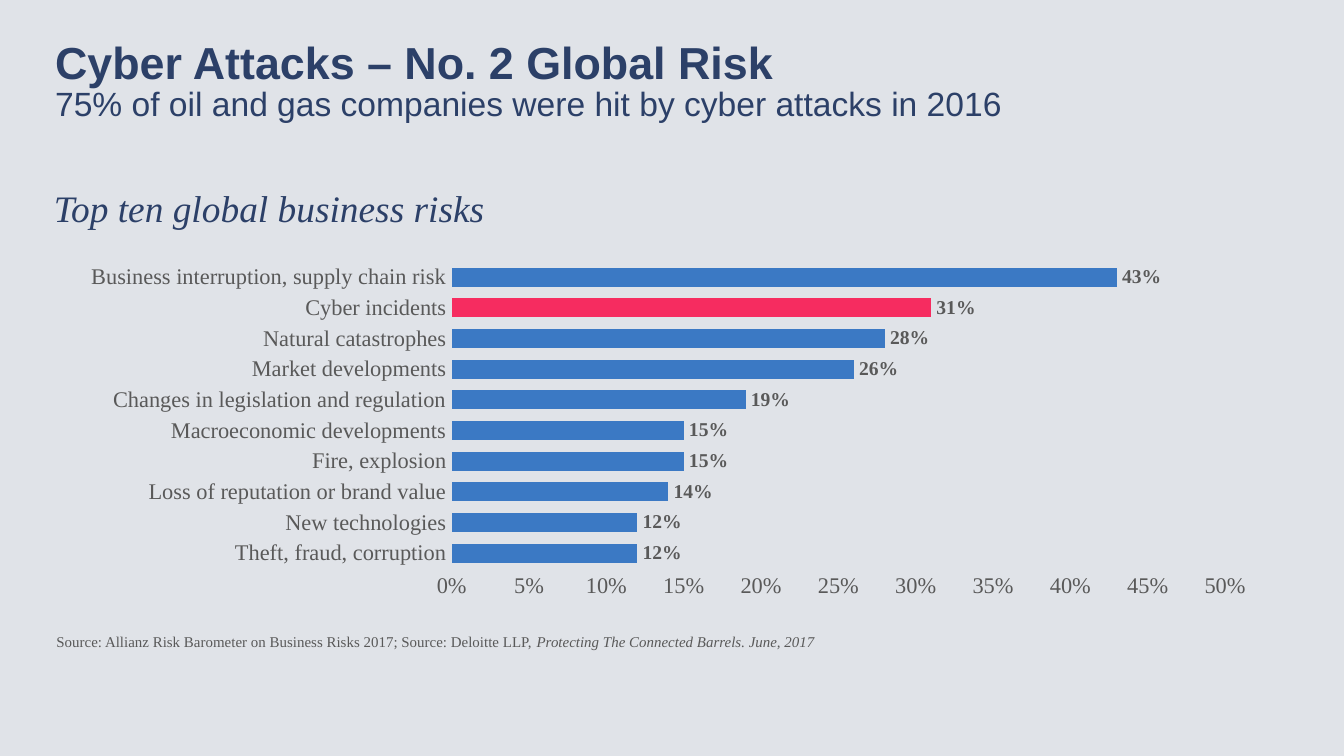
from lxml import etree
from pptx import Presentation
from pptx.chart.data import CategoryChartData
from pptx.dml.color import RGBColor
from pptx.enum.chart import XL_CHART_TYPE, XL_LABEL_POSITION, XL_TICK_MARK
from pptx.enum.text import MSO_ANCHOR, MSO_AUTO_SIZE, PP_ALIGN
from pptx.oxml.ns import qn
from pptx.util import Emu, Pt

EMU_PER_PX = 4572  # 200 px to the inch
TITLE_ONLY = 5
BAR_CLUSTERED = XL_CHART_TYPE.BAR_CLUSTERED
OUTSIDE_END = XL_LABEL_POSITION.OUTSIDE_END
NO_TICK = XL_TICK_MARK.NONE
TOP = MSO_ANCHOR.TOP
LEFT = PP_ALIGN.LEFT
NO_AUTOFIT = MSO_AUTO_SIZE.NONE

BACKGROUND = RGBColor(0xE0, 0xE3, 0xE8)
NAVY = RGBColor(0x2C, 0x40, 0x68)
GREY = RGBColor(0x59, 0x59, 0x59)
BLUE = RGBColor(0x3B, 0x79, 0xC4)
RED = RGBColor(0xF6, 0x2C, 0x60)

SANS, SERIF = "Arial", "Times New Roman"
HIGHLIGHTED_RISK = "Cyber incidents"
RISKS = {
    "Theft, fraud, corruption": 0.12,
    "New technologies": 0.12,
    "Loss of reputation or brand value": 0.14,
    "Fire, explosion": 0.15,
    "Macroeconomic developments": 0.15,
    "Changes in legislation and regulation": 0.19,
    "Market developments": 0.26,
    "Natural catastrophes": 0.28,
    HIGHLIGHTED_RISK: 0.31,
    "Business interruption, supply chain risk": 0.43,
}
PLOT_AREA = {"x": 0.323, "y": 0.057, "w": 0.607, "h": 0.751}


def px(length):
    return Emu(length * EMU_PER_PX)


def set_values(target, values):
    for name, value in values.items():
        setattr(target, name, value)


class RiskSlide:
    def __init__(self, deck):
        self.slide = deck.slides.add_slide(deck.slide_layouts[TITLE_ONLY])
        fill = self.slide.background.fill
        fill.solid()
        fill.fore_color.rgb = BACKGROUND

    def style_font(self, font, color, **values):
        set_values(font, values)
        font.color.rgb = color

    def fill_text(self, shape, box, runs, color, inset=0, **font_values):
        """Place a shape and fill it with one paragraph of (text, italic) runs."""
        set_values(shape, dict(zip(("left", "top", "width", "height"), map(px, box))))
        frame = shape.text_frame
        set_values(frame, {
            "word_wrap": True, "auto_size": NO_AUTOFIT, "vertical_anchor": TOP,
            "margin_left": 0, "margin_right": 0,
            "margin_top": px(inset), "margin_bottom": px(inset),
        })
        paragraph = frame.paragraphs[0]
        paragraph.alignment = LEFT
        for text, italic in runs:
            run = paragraph.add_run()
            run.text = text
            self.style_font(run.font, color, italic=italic, **font_values)

    def title(self, box, text, **font_values):
        self.fill_text(self.slide.shapes.title, box, [(text, False)], NAVY, **font_values)

    def text(self, box, runs, color, **values):
        shape = self.slide.shapes.add_textbox(0, 0, 0, 0)
        self.fill_text(shape, box, runs, color, **values)

    def bar_chart(self, box, values_by_category, highlighted):
        data = CategoryChartData(number_format="0%")
        data.categories = list(values_by_category)
        data.add_series("Series 1", list(values_by_category.values()))
        chart = self.slide.shapes.add_chart(BAR_CLUSTERED, *map(px, box), data).chart
        set_values(chart, {"has_legend": False, "has_title": False})
        self.style_font(chart.font, GREY, name=SERIF, size=Pt(18))

        for axis in (chart.category_axis, chart.value_axis):
            set_values(axis, {
                "major_tick_mark": NO_TICK, "minor_tick_mark": NO_TICK,
                "has_major_gridlines": False,
            })
            axis.format.line.fill.background()
            self.style_font(axis.tick_labels.font, GREY, name=SERIF, size=Pt(12))
        set_values(chart.value_axis, {
            "minimum_scale": 0, "maximum_scale": 0.5, "major_unit": 0.05,
        })
        set_values(chart.value_axis.tick_labels, {
            "number_format": "0%", "number_format_is_linked": False,
        })

        plot = chart.plots[0]
        set_values(plot, {"gap_width": 61, "vary_by_categories": False})
        series = plot.series[0]
        highlighted_point = series.points[list(values_by_category).index(highlighted)]
        for bar, color in ((series, BLUE), (highlighted_point, RED)):
            bar.format.fill.solid()
            bar.format.fill.fore_color.rgb = color

        labels = series.data_labels
        set_values(labels, {
            "show_value": True, "position": OUTSIDE_END,
            "number_format": "0%", "number_format_is_linked": False,
        })
        self.style_font(labels.font, GREY, name=SERIF, size=Pt(10.5), bold=True)
        self.fix_plot_area(chart)

    def fix_plot_area(self, chart):
        """Pin the inner plot area to fractions of the chart frame."""
        plot_area = chart._chartSpace.chart.plotArea
        for layout in plot_area.findall(qn("c:layout")):
            plot_area.remove(layout)
        layout = etree.Element(qn("c:layout"))
        plot_area.insert(0, layout)
        manual = etree.SubElement(layout, qn("c:manualLayout"))
        settings = {"layoutTarget": "inner", "xMode": "edge", "yMode": "edge", **PLOT_AREA}
        for tag, value in settings.items():
            etree.SubElement(manual, qn(f"c:{tag}"), val=str(value))


def main():
    deck = Presentation()
    set_values(deck, {"slide_width": px(2000), "slide_height": px(1125)})
    page = RiskSlide(deck)
    page.title((82, 52, 1836, 54), "Cyber Attacks – No. 2 Global Risk",
               name=SANS, size=Pt(24), bold=True)
    page.text((82, 124, 1836, 124),
              [("75% of oil and gas companies were hit by cyber attacks in 2016", False)],
              NAVY, name=SANS, size=Pt(18))
    page.bar_chart((60, 355, 1896, 608), RISKS, HIGHLIGHTED_RISK)
    page.text((80, 275, 1516, 94), [("Top ten global business risks", True)],
              NAVY, name=SERIF, size=Pt(20))
    page.text((84, 932, 1680, 68),
              [("Source: Allianz Risk Barometer on Business Risks 2017; "
                "Source: Deloitte LLP, ", False),
               ("Protecting The Connected Barrels. June, 2017", True)],
              GREY, inset=10, name=SERIF, size=Pt(8))
    deck.save("out.pptx")


if __name__ == "__main__":
    main()
